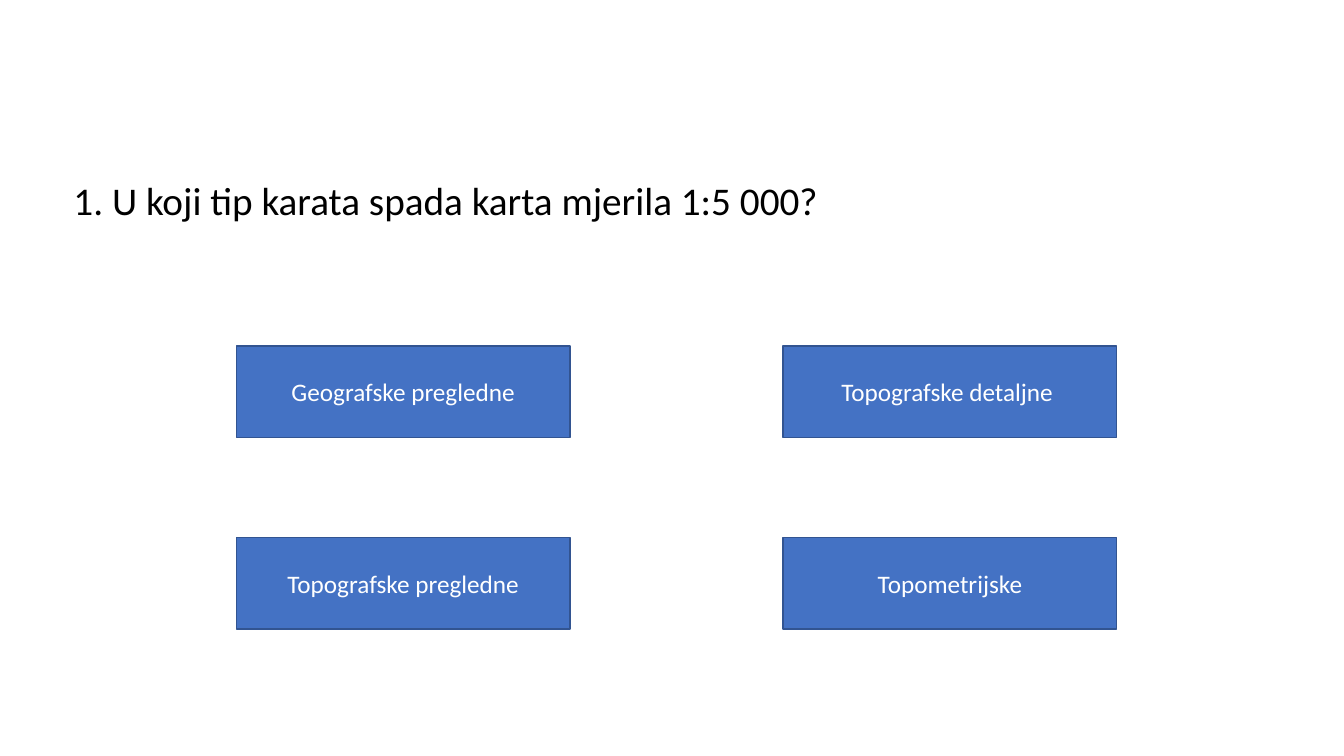
from pptx import Presentation
from pptx.dml.color import RGBColor
from pptx.enum.shapes import MSO_SHAPE
from pptx.enum.text import MSO_ANCHOR, PP_ALIGN
from pptx.util import Pt

ANSWERS = [
    ["Geografske pregledne", "Topografske detaljne "],
    ["Topografske pregledne", "Topometrijske"],
]
ANSWER_LEFT, ANSWER_TOP = 168.8, 247
COLUMN_STEP, ROW_STEP = 390.6, 136.8
ANSWER_WIDTH, ANSWER_HEIGHT = 238.3, 65.5


def color(value):
    return RGBColor.from_string(value)


def write_text(shape, text, size=18, font_color="000000",
               align=PP_ALIGN.LEFT, anchor=MSO_ANCHOR.TOP):
    frame = shape.text_frame
    frame.word_wrap = True
    frame.vertical_anchor = anchor
    paragraph = frame.paragraphs[0]
    paragraph.alignment = align
    run = paragraph.add_run()
    run.text = text
    run.font.name = "Calibri"
    run.font.size = Pt(size)
    run.font.color.rgb = color(font_color)


def add_question(slide, text):
    box = slide.shapes.add_textbox(Pt(45.4), Pt(122.4), Pt(850.3), Pt(41))
    write_text(box, text, size=28)


def add_answer(slide, text, left, top):
    shape = slide.shapes.add_shape(
        MSO_SHAPE.RECTANGLE, Pt(left), Pt(top), Pt(ANSWER_WIDTH), Pt(ANSWER_HEIGHT))
    shape.shadow.inherit = False
    shape.fill.solid()
    shape.fill.fore_color.rgb = color("4472C4")
    shape.line.color.rgb = color("325491")
    shape.line.width = Pt(1)
    write_text(shape, text, font_color="FFFFFF",
               align=PP_ALIGN.CENTER, anchor=MSO_ANCHOR.MIDDLE)


def main():
    presentation = Presentation()
    presentation.slide_width = Pt(960)
    presentation.slide_height = Pt(540)
    slide = presentation.slides.add_slide(presentation.slide_layouts[6])

    # Answer grid
    for row, answers in enumerate(ANSWERS):
        for column, answer in enumerate(answers):
            add_answer(slide, answer, ANSWER_LEFT + column * COLUMN_STEP,
                       ANSWER_TOP + row * ROW_STEP)

    # Question
    add_question(slide, "1. U koji tip karata spada karta mjerila 1:5 000?")

    presentation.save("out.pptx")


if __name__ == "__main__":
    main()
